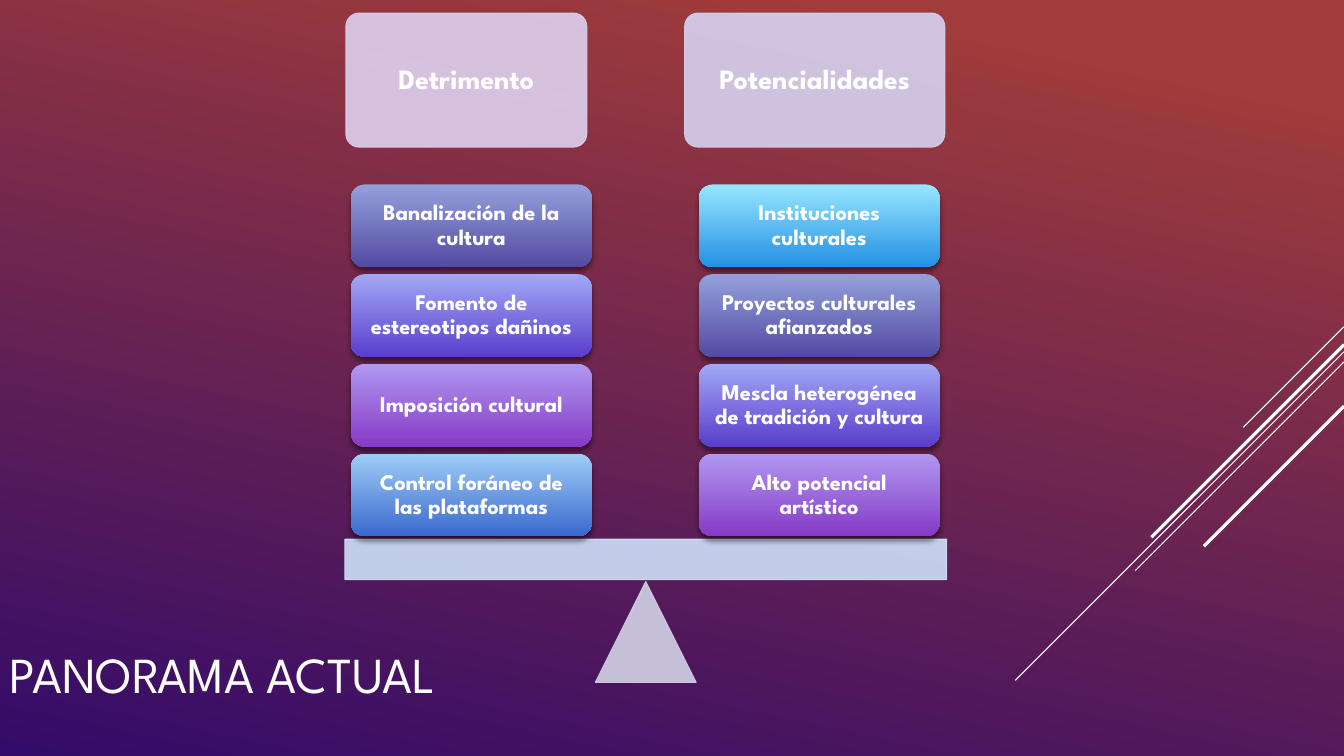
from lxml import etree
from pptx import Presentation, util as u
from pptx.dml.color import RGBColor
from pptx.enum import shapes, text
from pptx.oxml.ns import qn

WIDTH, HEIGHT = 13.33, 7.5
FONT = "League Spartan"
COLORS = {
    "white": "FFFFFF", "black": "000000",
    "sky_top": "A03C3A", "sky_bottom": "330B69",
    "left_header": "DED1EF", "right_header": "D6D2F1",
    "beam": "CFE1F8", "pivot": "D3D2E6",
}
GRADIENTS = {
    "cyan": ("97E6FF", "2491E3"),
    "slate": ("94A0DB", "534BA3"),
    "indigo": ("A2A8F5", "593ECC"),
    "violet": ("B098F0", "863AC6"),
    "blue": ("9FCDF6", "3A69CE"),
}
# Each side: header left, header width, block left, header colour, title, blocks
SIDES = [
    (0.01, 2.39, 0.06, "left_header", "Detrimento", [
        ("Banalización de la cultura", "slate"),
        ("Fomento de estereotipos dañinos", "indigo"),
        ("Imposición cultural", "violet"),
        ("Control foráneo de las plataformas", "blue"),
    ]),
    (3.37, 2.58, 3.51, "right_header", "Potencialidades", [
        ("Instituciones culturales", "cyan"),
        ("Proyectos culturales afianzados", "slate"),
        ("Mescla heterogénea de tradición y cultura", "indigo"),
        ("Alto potencial artístico", "violet"),
    ]),
]
# Diagonals at 45°: start height on the right edge, horizontal reach, weight
DIAGONALS = [(3.24, 1.0, 0.75), (3.49, 3.26, 0.75), (3.59, 2.07, 0.75),
             (3.42, 1.91, 2.25), (4.03, 1.39, 2.25)]


def rgb(value):
    return RGBColor.from_string(value)


def inches(*lengths):
    return [u.Inches(length) for length in lengths]


def write(shape, words, size, bold=False, align=text.PP_ALIGN.CENTER,
          margin=0.1, spacing=0.9):
    frame = shape.text_frame
    frame.word_wrap = True
    frame.vertical_anchor = text.MSO_ANCHOR.MIDDLE
    frame.margin_left = frame.margin_right = u.Inches(margin)
    frame.margin_top = frame.margin_bottom = u.Inches(margin)
    paragraph = frame.paragraphs[0]
    paragraph.alignment = align
    paragraph.line_spacing = spacing
    run = paragraph.add_run()
    run.text = words
    run.font.name, run.font.size, run.font.bold = FONT, u.Pt(size), bold
    run.font.color.rgb = rgb(COLORS["white"])


def fill_gradient(fill, colors, angle, start=0):
    fill.gradient()
    fill.gradient_angle = angle
    for stop, color, position in zip(fill.gradient_stops, colors, (start, 1)):
        stop.color.rgb = rgb(color)
        stop.position = position


def add_plain(slide, kind, box, color):
    """Add a shape whose fill and outline are 90 % opaque."""
    shape = slide.shapes.add_shape(kind, *inches(*box))
    shape.shadow.inherit = False
    shape.fill.solid()
    shape.fill.fore_color.rgb = shape.line.color.rgb = rgb(COLORS[color])
    shape.line.width = u.Pt(0.75)
    for node in shape.element.spPr.iter(qn("a:srgbClr")):
        etree.SubElement(node, qn("a:alpha"), val="90000")
    return shape


def add_block(slide, box, words, gradient):
    """Add a rounded gradient block with a soft shadow below."""
    shape = slide.shapes.add_shape(shapes.MSO_SHAPE.ROUNDED_RECTANGLE, *inches(*box))
    fill_gradient(shape.fill, GRADIENTS[gradient], 270)
    shape.line.fill.background()
    shape.shadow.inherit = False
    effects = shape.element.spPr.find(qn("a:effectLst"))
    shadow = etree.SubElement(
        effects, qn("a:outerShdw"), blurRad=str(u.Pt(4)), dist=str(u.Pt(3)),
        dir="5400000", algn="ctr", rotWithShape="0")
    color = etree.SubElement(shadow, qn("a:srgbClr"), val=COLORS["black"])
    etree.SubElement(color, qn("a:alpha"), val="46000")
    write(shape, words, 16, bold=True, margin=0.11)


def add_side(slide, left, top, side):
    header_left, header_width, block_left, color, title, blocks = side
    header = add_plain(slide, shapes.MSO_SHAPE.ROUNDED_RECTANGLE,
                       (left + header_left, top, header_width, 1.33), color)
    header.adjustments[0] = 0.1
    write(header, title, 20, bold=True, margin=0.12)
    for row, (words, gradient) in enumerate(blocks):
        box = (left + block_left, top + 1.7 + row * 0.89, 2.39, 0.82)
        add_block(slide, box, words, gradient)


def add_balance(slide, left, top, width, height):
    # Pivot and beam
    pivot = 1
    add_plain(slide, shapes.MSO_SHAPE.ISOSCELES_TRIANGLE,
              (left + (width - pivot) / 2, top + height - pivot, pivot, pivot), "pivot")
    add_plain(slide, shapes.MSO_SHAPE.RECTANGLE,
              (left, top + height - 1.42, width, 0.4), "beam")
    # Weights on both sides
    for side in SIDES:
        add_side(slide, left, top, side)


def add_diagonals(slide, right):
    for start, reach, weight in DIAGONALS:
        line = slide.shapes.add_connector(
            shapes.MSO_CONNECTOR.STRAIGHT,
            *inches(right, start, right - reach, start + reach))
        line.line.color.rgb = rgb(COLORS["white"])
        line.line.width = u.Pt(weight)
        etree.SubElement(line.element.spPr, qn("a:effectLst"))


def add_title(slide, left, top, width, height):
    title = slide.shapes.add_textbox(*inches(left, top, width, height))
    write(title, "PANORAMA ACTUAL", 36, align=text.PP_ALIGN.LEFT, spacing=1.0)


def main():
    presentation = Presentation()
    presentation.slide_width, presentation.slide_height = inches(WIDTH, HEIGHT)
    slide = presentation.slides.add_slide(presentation.slide_layouts[6])
    fill_gradient(slide.background.fill,
                  (COLORS["sky_top"], COLORS["sky_bottom"]), 258, start=0.1)
    add_diagonals(slide, WIDTH)
    add_title(slide, 0, HEIGHT * 0.78, WIDTH * 0.7, HEIGHT * 0.22)
    add_balance(slide, 3.42, 0.13, 5.97, 6.64)
    presentation.save("out.pptx")


if __name__ == "__main__":
    main()
